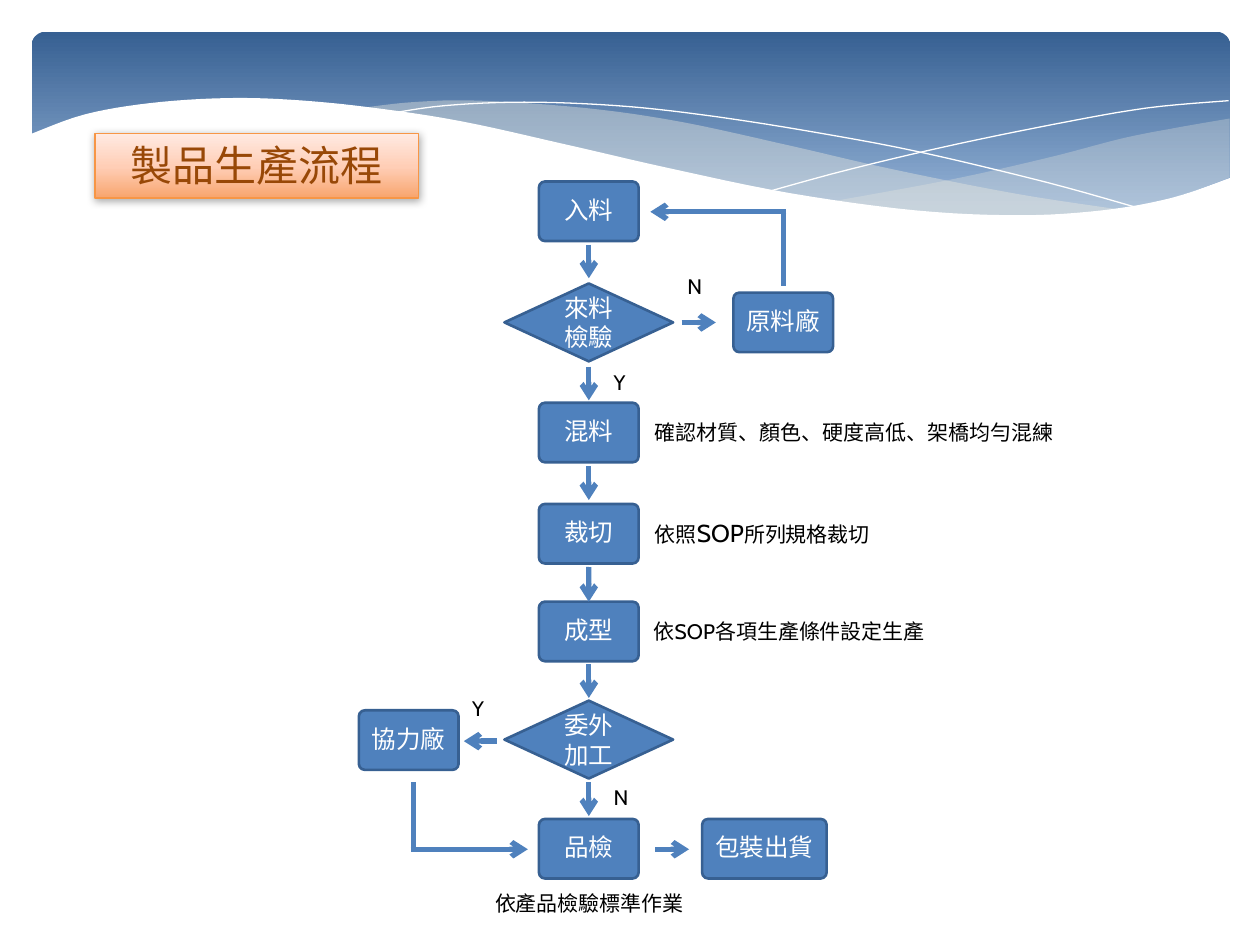
from dataclasses import dataclass
from typing import Optional

from lxml.etree import SubElement
from pptx import Presentation
from pptx.dml.color import RGBColor
from pptx.enum.shapes import MSO_CONNECTOR, MSO_SHAPE
from pptx.enum.text import MSO_ANCHOR, PP_ALIGN
from pptx.oxml.ns import qn
from pptx.util import Cm, Pt

BLUE, NAVY, WHITE, CREAM = "4F81BD", "376092", "FFFFFF", "EEECE1"
SPINE = 11.87


@dataclass
class Step:
    text: str
    x: float
    y: float
    width: float = 2.01
    height: float = 1.2
    decision: bool = False


@dataclass
class Arrow:
    x1: float
    y1: float
    x2: float
    y2: float
    head: bool = True
    target: Optional[str] = None


@dataclass
class Label:
    segments: tuple
    x: float
    y: float
    width: float = 0.79
    wrap: bool = True


@dataclass
class Wave:
    curves: list
    fill: Optional[str] = None
    opacity: int = 100


STEPS = [
    Step("原料廠", 15.79, 6.5),
    Step("混料", SPINE, 8.72),
    Step("裁切", SPINE, 10.76),
    Step("入料", SPINE, 4.26),
    Step("成型", SPINE, 12.73),
    Step("品檢", SPINE, 17.11),
    Step("包裝出貨", 15.41, 17.11, 2.51),
    Step("協力廠", 8.24, 14.92),
    Step("來料檢驗", SPINE, 6.5, 3.4, 1.57, True),
    Step("委外加工", SPINE, 14.91, 3.4, 1.57, True),
]
DOWN_STARTS = {4.93: None, 7.39: None, 9.4: None, 11.43: "成型", 13.39: None, 15.77: None}
ARROWS = [Arrow(SPINE, y, SPINE, y + 0.68, target=target) for y, target in DOWN_STARTS.items()] + [
    Arrow(10.01, 14.94, 9.35, 14.94),
    Arrow(13.21, 17.12, 13.89, 17.12),
    Arrow(13.74, 6.5, 14.43, 6.5),
    Arrow(8.28, 17.12, 10.64, 17.12),
    Arrow(8.33, 17.12, 8.33, 15.77, head=False),
    Arrow(15.85, 4.27, 13.11, 4.27),
    Arrow(15.8, 4.27, 15.8, 5.77, head=False),
]
LABELS = [
    Label((("確認材質、顏色、硬度高低、架橋均勻混練", 12),), 12.95, 8.33, 8.64, False),
    Label((("依照", 12), ("SOP", 14), ("所列規格裁切", 12)), 12.95, 10.31, 6.48),
    Label((("依SOP各項生產條件設定生產", 12),), 12.93, 12.34, 10.69),
    Label((("依產品檢驗標準作業", 12),), 9.73, 17.83, 5.79),
    Label((("Y", 12),), 12.12, 7.32),
    Label((("N", 12),), 13.61, 5.38),
    Label((("Y", 12),), 9.27, 13.89),
    Label((("N", 12),), 12.12, 15.7),
]
WAVES = [
    Wave([
        [(24.79, 2.39), (23.75, 2.57), (22.63, 2.79), (21.13, 3.18), (19.13, 3.63), (16.79, 4.06)],
        [(16.79, 4.06), (18.26, 4.24), (19.53, 4.34), (20.93, 4.37), (22.15, 4.29),
         (23.57, 4.01), (24.79, 3.58)],
    ], CREAM, 29),
    Wave([
        [(22.68, 4.24), (20.5, 3.91), (17.93, 3.4), (15.98, 2.95), (13.74, 2.46), (11.81, 2.18),
         (9.65, 2.03), (8.33, 2.06), (7.26, 2.18)],
        [(7.26, 2.18), (9.19, 2.46), (11.4, 2.95), (14.38, 3.63), (16.89, 4.09), (19, 4.32),
         (20.78, 4.39), (22.68, 4.24)],
    ], CREAM, 40),
    Wave([[(7.85, 2.29), (8.97, 2.13), (10.57, 2.06), (12.42, 2.13), (14.12, 2.31),
           (16.15, 2.62), (18.47, 3.05), (21.11, 3.68), (23.04, 4.22)]]),
    Wave([[(15.57, 3.84), (17.07, 3.43), (19, 2.97), (21.23, 2.51), (23.11, 2.18), (24.77, 2.03)]]),
    Wave([
        [(24.82, 3.58), (23.62, 3.99), (22.23, 4.24), (20.55, 4.34), (18.44, 4.24), (15.9, 3.89),
         (13.44, 3.38), (11.35, 2.9), (9.27, 2.44), (7.42, 2.16), (5.84, 2.01), (4.5, 1.98),
         (3.02, 2.08), (1.7, 2.31), (0.58, 2.72)],
        [(0.58, 5.69), (24.82, 5.69)],
    ], WHITE),
]


def color(value: str) -> RGBColor:
    return RGBColor.from_string(value)


def paint(shape, fill: Optional[str], line: Optional[str], width: float = 1.5) -> None:
    shape.shadow.inherit = False
    if fill:
        shape.fill.solid()
        shape.fill.fore_color.rgb = color(fill)
    else:
        shape.fill.background()
    if line:
        shape.line.color.rgb = color(line)
        shape.line.width = Pt(width)
    else:
        shape.line.fill.background()


def paint_gradient(shape, stops: list, angle: int) -> None:
    shape.fill.gradient()
    shape.fill.gradient_angle = angle
    stop_list = shape._element.spPr.find(".//" + qn("a:gsLst"))
    stop_list.clear()
    for position, value in stops:
        stop = SubElement(stop_list, qn("a:gs"), pos=str(position * 1000))
        SubElement(stop, qn("a:srgbClr"), val=value)


def add_shadow(shape) -> None:
    effects = shape._element.spPr.find(qn("a:effectLst"))
    shadow = SubElement(effects, qn("a:outerShdw"), blurRad=str(Pt(5)), dist=str(Pt(1)),
                        dir="5400000", rotWithShape="0")
    shade = SubElement(shadow, qn("a:srgbClr"), val="000000")
    SubElement(shade, qn("a:alpha"), val="32000")


def format_run(run, size: float, value: str, name: str = "Cabin") -> None:
    run.font.size = Pt(size)
    run.font.name = name
    run.font.color.rgb = color(value)


def smooth_curve(points: list, samples: int = 6) -> list:
    if len(points) < 3:
        return points
    padded = [points[0], *points, points[-1]]
    result = [points[0]]
    for a, b, c, d in zip(padded, padded[1:], padded[2:], padded[3:]):
        for index in range(1, samples + 1):
            t = index / samples
            result.append(tuple(
                (2 * q + (r - p) * t + (2 * p - 5 * q + 4 * r - s) * t ** 2
                 + (3 * q - p - 3 * r + s) * t ** 3) / 2
                for p, q, r, s in zip(a, b, c, d)))
    return result


def draw_wave(slide, wave: Wave) -> None:
    points = [(Cm(x), Cm(y)) for curve in wave.curves for x, y in smooth_curve(curve)]
    builder = slide.shapes.build_freeform(*points[0], scale=1.0)
    builder.add_line_segments(points[1:], close=wave.fill is not None)
    shape = builder.convert_to_shape()
    paint(shape, wave.fill, None if wave.fill else WHITE, 0)
    if wave.opacity < 100:
        shade = shape._element.spPr.find(qn("a:solidFill")).find(qn("a:srgbClr"))
        SubElement(shade, qn("a:alpha"), val=str(wave.opacity * 1000))


def draw_header(slide) -> None:
    shape = slide.shapes.add_shape(MSO_SHAPE.ROUNDED_RECTANGLE, Cm(0.64), Cm(0.64), Cm(24.16), Cm(3.96))
    shape.adjustments[0] = 0.07
    paint(shape, None, None)
    paint_gradient(shape, [(0, NAVY), (90, "95B3D7"), (100, "95B3D7")], 270)
    for wave in WAVES:
        draw_wave(slide, wave)


def draw_title(slide) -> None:
    shape = slide.shapes.add_shape(MSO_SHAPE.RECTANGLE, Cm(1.91), Cm(2.69), Cm(6.53), Cm(1.3))
    paint(shape, None, "F79646", 1)
    paint_gradient(shape, [(0, "F8A56E"), (48, "FFCEB6"), (100, "FFEAE2")], 90)
    add_shadow(shape)
    shape.text_frame.text = "製品生產流程"
    shape.text_frame.vertical_anchor = MSO_ANCHOR.TOP
    paragraph = shape.text_frame.paragraphs[0]
    paragraph.alignment = PP_ALIGN.CENTER
    format_run(paragraph.runs[0], 24, "984807", "Arial")


def draw_step(slide, step: Step):
    preset = MSO_SHAPE.FLOWCHART_DECISION if step.decision else MSO_SHAPE.ROUNDED_RECTANGLE
    shape = slide.shapes.add_shape(preset, Cm(step.x - step.width / 2), Cm(step.y - step.height / 2),
                                   Cm(step.width), Cm(step.height))
    paint(shape, BLUE, NAVY)
    frame = shape.text_frame
    frame.text = step.text
    frame.vertical_anchor = MSO_ANCHOR.MIDDLE
    paragraph = frame.paragraphs[0]
    paragraph.alignment = PP_ALIGN.CENTER
    format_run(paragraph.runs[0], 14, WHITE)
    if not step.decision:
        shape.adjustments[0] = 0.1
        paragraph.line_spacing = 0.9
        frame.margin_left = frame.margin_right = frame.margin_top = frame.margin_bottom = Cm(0.2)
    return shape


def draw_arrow(slide, arrow: Arrow, shapes: dict) -> None:
    connector = slide.shapes.add_connector(MSO_CONNECTOR.STRAIGHT, Cm(arrow.x1), Cm(arrow.y1),
                                           Cm(arrow.x2), Cm(arrow.y2))
    connector.line.color.rgb = color(BLUE)
    connector.line.width = Pt(3)
    if arrow.head:
        SubElement(connector.line._get_or_add_ln(), qn("a:tailEnd"), type="arrow")
    SubElement(connector._element.spPr, qn("a:effectLst"))
    if arrow.target:
        connector.end_connect(shapes[arrow.target], 0)


def draw_label(slide, label: Label) -> None:
    shape = slide.shapes.add_textbox(Cm(label.x), Cm(label.y), Cm(label.width), Cm(0.76))
    shape.text_frame.word_wrap = label.wrap
    paragraph = shape.text_frame.paragraphs[0]
    for text, size in label.segments:
        run = paragraph.add_run()
        run.text = text
        format_run(run, size, "000000")


def main() -> None:
    presentation = Presentation()
    presentation.slide_width, presentation.slide_height = Cm(25.4), Cm(19.05)
    slide = presentation.slides.add_slide(presentation.slide_layouts[6])
    draw_header(slide)
    draw_title(slide)
    shapes = {step.text: draw_step(slide, step) for step in STEPS}
    for arrow in ARROWS:
        draw_arrow(slide, arrow, shapes)
    for label in LABELS:
        draw_label(slide, label)
    presentation.save("out.pptx")


if __name__ == "__main__":
    main()
